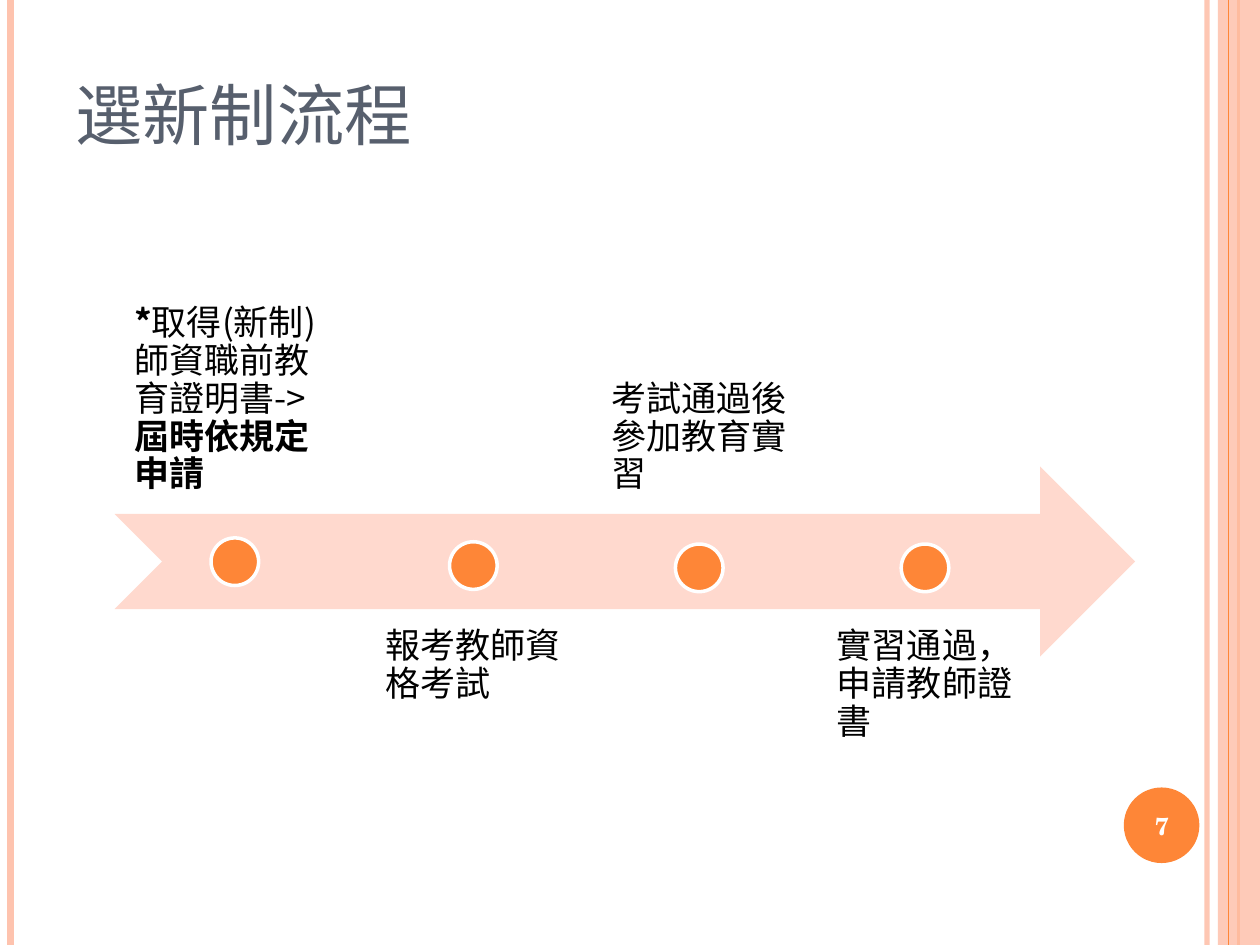
from dataclasses import dataclass
from typing import NamedTuple, Optional

from lxml.etree import SubElement
from pptx import Presentation
from pptx.dml.color import RGBColor as RGB
from pptx.enum.shapes import MSO_CONNECTOR as Connector, MSO_SHAPE as Shape
from pptx.enum.text import MSO_ANCHOR as Anchor, PP_ALIGN as Align
from pptx.oxml.ns import qn
from pptx.util import Pt


@dataclass(frozen=True)
class Theme:
    accent: RGB = RGB.from_string("FE8637")
    stripe: RGB = RGB.from_string("FEC3AE")
    arrow: RGB = RGB.from_string("FFD9CE")
    heading: RGB = RGB.from_string("575F6D")
    white: RGB = RGB.from_string("FFFFFF")
    black: RGB = RGB.from_string("000000")
    heading_font: str = "Noto Sans CJK JP"
    body_font: str = "Noto Sans CJK SC"
    number_font: str = "TeX Gyre Schola"
    heading_size: float = 48
    body_size: float = 20
    number_size: float = 14


class Box(NamedTuple):
    left: float
    top: float
    width: float
    height: float

    def lengths(self) -> list:
        return [Pt(v) for v in self]


class Run(NamedTuple):
    text: str
    bold: bool = False


class Stripe(NamedTuple):
    x: float
    width: float
    color: RGB
    opacity: int = 100


class Step(NamedTuple):
    center_x: float
    dot_y: float
    width: float
    runs: list


T = Theme()
SLIDE_W, SLIDE_H = 720, 540
DOT = 27.2
STEP_H, ABOVE_TOP, BELOW_TOP = 108.7, 185, 347.8

STRIPES_BELOW = [
    Stripe(689.8, 3, T.stripe, 93),
    Stripe(6, 4.5, T.stripe),
    Stripe(707.8, 1.5, T.accent),
]
STRIPE_ABOVE = Stripe(702, 0.75, T.accent)
STEPS = [
    Step(134.2, 321, 137.5,
         [Run("*", True), Run("取得(新制)師資職前教育證明書->"), Run("屆時依規定申請", True)]),
    Step(270.5, 323.2, 123.1, [Run("報考教師資格考試")]),
    Step(399.6, 324.5, 123.1, [Run("考試通過後參加教育實習")]),
    Step(528.6, 324.5, 123.1, [Run("實習通過，申請教師證書")]),
]


def set_opacity(s, percent: int) -> None:
    for color in s._element.spPr.iter(qn("a:srgbClr")):
        SubElement(color, qn("a:alpha")).set("val", str(percent * 1000))


def add_stripe(slide, stripe: Stripe) -> None:
    x = Pt(stripe.x)
    s = slide.shapes.add_connector(Connector.STRAIGHT, x, 0, x, Pt(SLIDE_H))
    s.line.color.rgb = stripe.color
    s.line.width = Pt(stripe.width)
    if stripe.opacity < 100:
        set_opacity(s, stripe.opacity)
    SubElement(s._element.spPr, qn("a:effectLst"))


def add_filled(slide, kind: Shape, box: Box, fill: RGB, line: Optional[RGB] = None):
    s = slide.shapes.add_shape(kind, *box.lengths())
    s.shadow.inherit = False
    s.fill.solid()
    s.fill.fore_color.rgb = fill
    if line is None:
        s.line.fill.background()
    else:
        s.line.color.rgb = line
        s.line.width = Pt(2)
    return s


def add_text(slide, box: Box, runs: list, *, font: str, size: float, color: RGB,
             anchor: Anchor = Anchor.TOP, align: Align = Align.LEFT,
             inset: Optional[float] = None, spacing: float = 1.0,
             small_caps: bool = False) -> None:
    tf = slide.shapes.add_textbox(*box.lengths()).text_frame
    tf.word_wrap = True
    tf.vertical_anchor = anchor
    if inset is not None:
        tf.margin_left = tf.margin_right = tf.margin_top = tf.margin_bottom = Pt(inset)
    p = tf.paragraphs[0]
    p.alignment = align
    p.line_spacing = spacing
    for run in runs:
        r = p.add_run()
        r.text = run.text
        r.font.name = font
        r.font.size = Pt(size)
        r.font.bold = run.bold
        r.font.color.rgb = color
        props = r.font._element
        SubElement(props, qn("a:ea")).set("typeface", font)
        if small_caps:
            props.set("cap", "small")


def add_step(slide, step: Step, above: bool) -> None:
    """Write the step above or below the arrow and centre its dot on the text box."""
    top = ABOVE_TOP if above else BELOW_TOP
    add_text(slide, Box(step.center_x - step.width / 2, top, step.width, STEP_H), step.runs,
             font=T.body_font, size=T.body_size, color=T.black, inset=11.2, spacing=0.9,
             anchor=Anchor.BOTTOM if above else Anchor.TOP)
    dot = Box(step.center_x - DOT / 2, step.dot_y - DOT / 2, DOT, DOT)
    add_filled(slide, Shape.OVAL, dot, T.accent, T.white)


def main() -> None:
    prs = Presentation()
    prs.slide_width, prs.slide_height = Pt(SLIDE_W), Pt(SLIDE_H)
    slide = prs.slides.add_slide(prs.slide_layouts[6])

    for stripe in STRIPES_BELOW:
        add_stripe(slide, stripe)
    band = add_filled(slide, Shape.RECTANGLE, Box(696, 0, 24, SLIDE_H), T.stripe)
    set_opacity(band, 87)
    add_stripe(slide, STRIPE_ABOVE)
    add_filled(slide, Shape.OVAL, Box(642.2, 450, 43.2, 43.2), T.accent)

    add_text(slide, Box(36, 3.6, 588, 90), [Run("選新制流程")], font=T.heading_font,
             size=T.heading_size, color=T.heading, anchor=Anchor.BOTTOM, small_caps=True)

    add_filled(slide, Shape.NOTCHED_RIGHT_ARROW, Box(65.5, 266.5, 583.2, STEP_H), T.arrow)
    for i, step in enumerate(STEPS):
        add_step(slide, step, above=i % 2 == 0)

    add_text(slide, Box(640, 451.4, 48, 41), [Run("7", True)], font=T.number_font,
             size=T.number_size, color=T.white, anchor=Anchor.MIDDLE, align=Align.CENTER)
    prs.save("out.pptx")


if __name__ == "__main__":
    main()
